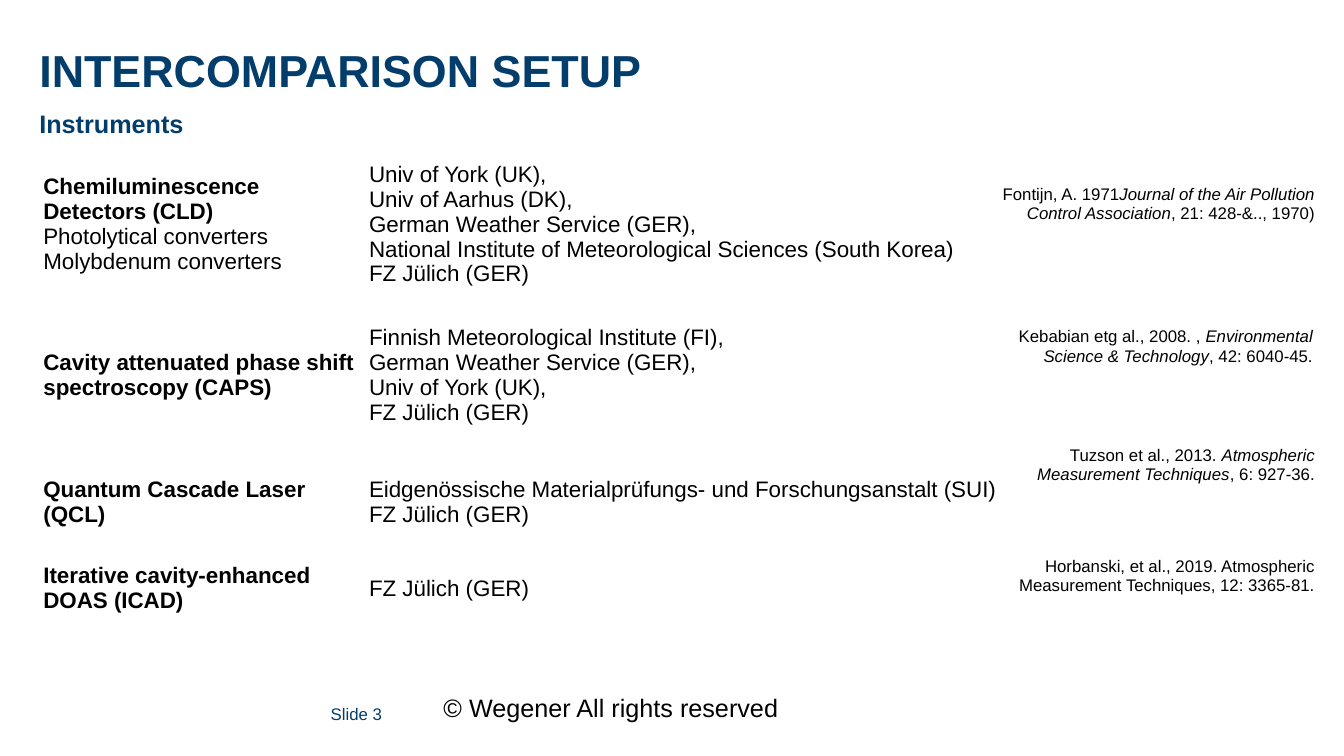
from dataclasses import dataclass

from lxml import etree
from pptx import Presentation
from pptx.dml.color import RGBColor
from pptx.enum.text import MSO_ANCHOR, PP_ALIGN
from pptx.oxml.ns import qn
from pptx.util import Emu, Pt

MIDDLE = MSO_ANCHOR.MIDDLE
LEFT, RIGHT = PP_ALIGN.LEFT, PP_ALIGN.RIGHT
PX = 9144  # 100 px to the inch
FONT = "Arial"
COLORS = {"navy": "023D6B", "black": "000000", "white": "FFFFFF"}
COLS = (315, 8, 732)
TABLE_LEFT = 42


@dataclass
class Label:
    text: str
    box: tuple[int, int, int, int]
    size: int
    color: str = "navy"
    bold: bool = False
    inset: bool = False
    wrap: bool = True
    ratio: float | None = None


@dataclass
class Group:
    top: int
    rows: tuple[int, int]
    method: str
    kinds: list[str]
    sites: list[str]


@dataclass
class Source:
    box: tuple[int, int, int, int]
    lead: str
    title: str = ""
    tail: str = ""


LABELS = [
    Label("© Wegener All rights reserved", (430, 682, 355, 40), 18, "black",
          inset=True, wrap=False),
    Label("INTERCOMPARISON SETUP", (39, 35, 1252, 123), 32, bold=True, ratio=1.14),
    Label("Instruments", (39, 103, 1252, 56), 18, bold=True, ratio=1.14),
    Label("Slide 3", (328, 698, 79, 24), 12),
]

GROUPS = [
    Group(155, (124, 31), "Chemiluminescence Detectors (CLD)",
          ["Photolytical converters", "Molybdenum converters"],
          ["Univ of York (UK),", "Univ of Aarhus (DK),",
           "German Weather Service (GER),",
           "National Institute of Meteorological Sciences (South Korea)",
           "FZ Jülich (GER)"]),
    Group(312, (119, 21), "Cavity attenuated phase shift spectroscopy (CAPS)", [],
          ["Finnish Meteorological Institute (FI),",
           "German Weather Service (GER),", "Univ of York (UK),",
           "FZ Jülich (GER)"]),
    Group(438, (119, 21), "Quantum Cascade Laser (QCL)", [],
          ["Eidgenössische Materialprüfungs- und Forschungsanstalt (SUI)",
           "FZ Jülich (GER)"]),
    Group(556, (49, 21), "Iterative cavity-enhanced DOAS (ICAD)", [],
          ["FZ Jülich (GER)"]),
]

SOURCES = [
    Source((974, 179, 340, 48), "Fontijn, A. 1971",
           "Journal of the Air Pollution Control Association",
           ", 21: 428-&.., 1970)"),
    Source((972, 320, 340, 48), "Kebabian etg al., 2008. , ",
           "Environmental Science & Technology", ", 42: 6040-45."),
    Source((997, 438, 317, 48), "Tuzson et al., 2013. ",
           "Atmospheric Measurement Techniques", ", 6: 927-36."),
    Source((974, 548, 340, 48),
           "Horbanski, et al., 2019. Atmospheric Measurement Techniques, "
           "12: 3365-81."),
]


def px(value: int) -> Emu:
    return Emu(value * PX)


def rgb(name: str) -> RGBColor:
    return RGBColor.from_string(COLORS[name])


def style(para, size: int, color: str = "black", bold: bool = False) -> None:
    font = para.font
    font.name, font.size, font.bold = FONT, Pt(size), bold
    font.color.rgb = rgb(color)


def add_box(slide, box: tuple[int, int, int, int], wrap: bool = True):
    frame = slide.shapes.add_textbox(*map(px, box)).text_frame
    frame.word_wrap = wrap
    return frame


def add_label(slide, label: Label) -> None:
    frame = add_box(slide, label.box, label.wrap)
    if not label.inset:
        frame.margin_left = frame.margin_right = 0
        frame.margin_top = frame.margin_bottom = 0
    para = frame.paragraphs[0]
    para.text = label.text
    para.alignment = LEFT
    para.line_spacing = label.ratio
    style(para, label.size, label.color, label.bold)


def add_source(slide, source: Source) -> None:
    para = add_box(slide, source.box).paragraphs[0]
    para.alignment = RIGHT
    para.line_spacing = 0.95
    style(para, 12)
    for text, slant in ((source.lead, False), (source.title, True),
                        (source.tail, False)):
        if text:
            run = para.add_run()
            run.text = text
            run.font.italic = slant


def dress(cell) -> None:
    cell.margin_left = cell.margin_right = cell.margin_top = px(1)
    cell.margin_bottom = 0
    cell.vertical_anchor = MIDDLE
    # White borders go before the fill
    props = cell._tc.get_or_add_tcPr()
    for side in ("a:lnL", "a:lnR", "a:lnT", "a:lnB"):
        line = etree.SubElement(props, qn(side), w=str(Pt(1)))
        fill = etree.SubElement(line, qn("a:solidFill"))
        etree.SubElement(fill, qn("a:srgbClr"), val=COLORS["white"])
    cell.fill.solid()
    cell.fill.fore_color.rgb = rgb("white")


def write(cell, lines: list[str], head: bool) -> None:
    frame = cell.text_frame
    for i, text in enumerate(lines):
        para = frame.add_paragraph() if i else frame.paragraphs[0]
        para.text = text
        style(para, 16, bold=head and i == 0)


def add_group(slide, group: Group) -> None:
    table = slide.shapes.add_table(
        len(group.rows), len(COLS), px(TABLE_LEFT), px(group.top),
        px(sum(COLS)), px(sum(group.rows))).table
    table.first_row = table.horz_banding = False
    for col, width in zip(table.columns, COLS):
        col.width = px(width)
    for row, height in zip(table.rows, group.rows):
        row.height = px(height)
    for cell in table.iter_cells():
        dress(cell)
    table.cell(0, 1).merge(table.cell(1, 1))
    write(table.cell(0, 0), [group.method, *group.kinds], True)
    write(table.cell(0, 2), group.sites, False)


def main() -> None:
    deck = Presentation()
    deck.slide_width, deck.slide_height = px(1333), px(750)
    slide = deck.slides.add_slide(deck.slide_layouts[6])
    # Headings and footer
    for label in LABELS:
        add_label(slide, label)
    # Instruments with their sites
    for group in GROUPS:
        add_group(slide, group)
    # References
    for source in SOURCES:
        add_source(slide, source)
    deck.save("out.pptx")


if __name__ == "__main__":
    main()
